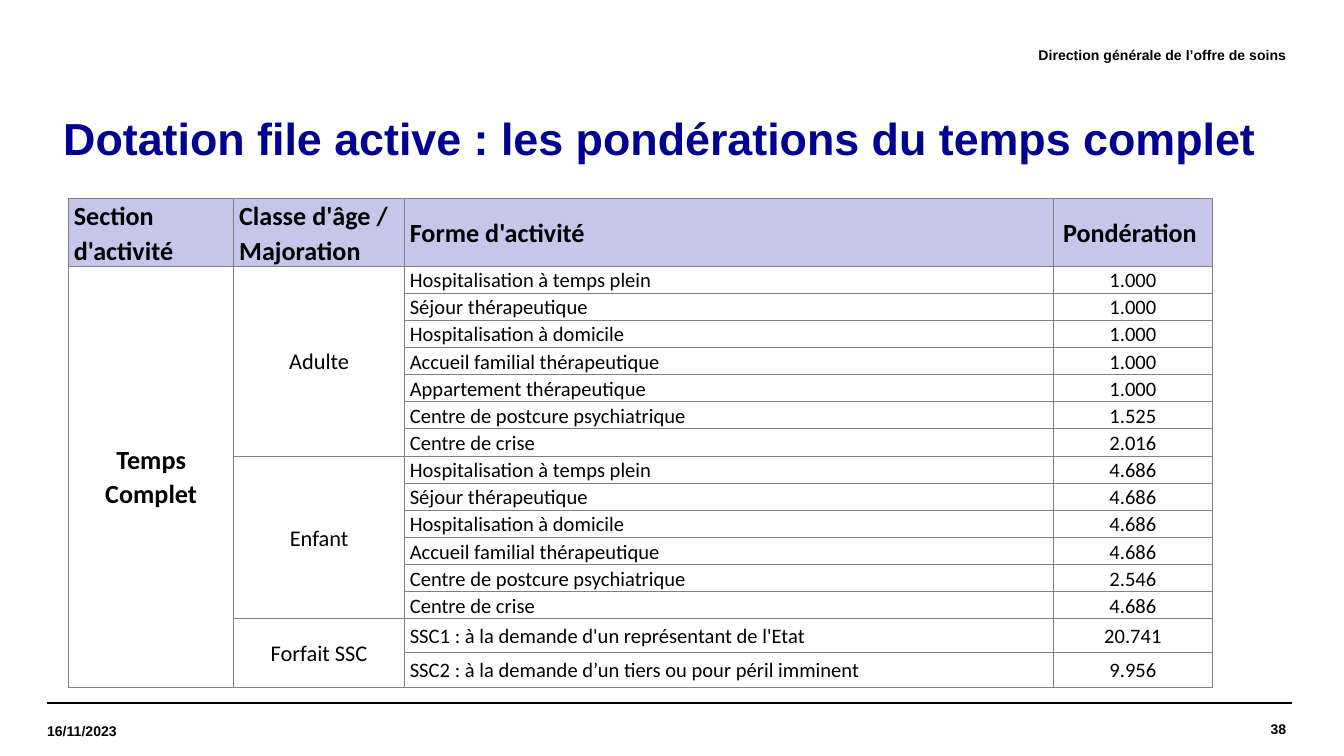
from lxml.etree import SubElement
from pptx import Presentation
from pptx.dml.color import RGBColor
from pptx.enum.shapes import MSO_CONNECTOR
from pptx.enum.text import MSO_ANCHOR, PP_ALIGN
from pptx.oxml.ns import qn
from pptx.util import Inches, Pt

# Content
TITLE = "Dotation file active : les pondérations du temps complet"
DEPARTMENT = "Direction générale de l’offre de soins"
DATE = "16/11/2023"
PAGE_NUMBER = "38"

HEADERS = ["Section d'activité", "Classe d'âge / Majoration", "Forme d'activité", "Pondération "]
SECTION = "Temps Complet"
GROUPS = [
    ("Adulte", [
        ("Hospitalisation à temps plein", "1.000"),
        ("Séjour thérapeutique", "1.000"),
        ("Hospitalisation à domicile", "1.000"),
        ("Accueil familial thérapeutique", "1.000"),
        ("Appartement thérapeutique", "1.000"),
        ("Centre de postcure psychiatrique", "1.525"),
        ("Centre de crise", "2.016"),
    ]),
    ("Enfant", [
        ("Hospitalisation à temps plein", "4.686"),
        ("Séjour thérapeutique", "4.686"),
        ("Hospitalisation à domicile", "4.686"),
        ("Accueil familial thérapeutique", "4.686"),
        ("Centre de postcure psychiatrique", "2.546"),
        ("Centre de crise", "4.686"),
    ]),
    ("Forfait SSC", [
        ("SSC1 : à la demande d'un représentant de l'Etat", "20.741"),
        ("SSC2 : à la demande d’un tiers ou pour péril imminent", "9.956"),
    ]),
]

COLORS = {
    "text": "000000",
    "title": "000091",
    "header": "C6C6EA",
    "body": "FFFFFF",
    "border": "808080",
}
PAGE_WIDTH = 10
COLUMN_WIDTHS = [1.23, 1.27, 4.83, 1.18]
ROW_HEIGHTS = [0.48] + [2.63 / 13] * 13 + [0.25, 0.26]
LEFT, CENTER, RIGHT = PP_ALIGN.LEFT, PP_ALIGN.CENTER, PP_ALIGN.RIGHT


def write(frame, text, size=7.5, font="Arial", color="text", bold=True, align=LEFT, spacing=None):
    frame.word_wrap = True
    para = frame.paragraphs[0]
    para.alignment = align
    if spacing:
        para.line_spacing = spacing
    span = para.add_run()
    span.text = text
    span.font.size = Pt(size)
    span.font.name = font
    span.font.bold = bold
    span.font.color.rgb = RGBColor.from_string(COLORS[color])


def add_text(page, text, left, top, width, height, inset=(0, 0), **style):
    box = page.shapes.add_textbox(Inches(left), Inches(top), Inches(width), Inches(height))
    frame = box.text_frame
    frame.margin_left, frame.margin_right = Inches(inset[0]), Inches(inset[1])
    frame.margin_top = frame.margin_bottom = 0
    frame.vertical_anchor = MSO_ANCHOR.MIDDLE
    write(frame, text, **style)


def format_cell(cell, fill):
    cell.margin_left = cell.margin_right = Inches(0.04)
    cell.margin_top = cell.margin_bottom = 0
    cell.vertical_anchor = MSO_ANCHOR.MIDDLE
    properties = cell._tc.get_or_add_tcPr()
    for side in ("a:lnL", "a:lnR", "a:lnT", "a:lnB"):
        border = SubElement(properties, qn(side), w=str(Pt(0.5)))
        paint = SubElement(border, qn("a:solidFill"))
        SubElement(paint, qn("a:srgbClr"), val=COLORS["border"])
    cell.fill.solid()
    cell.fill.fore_color.rgb = RGBColor.from_string(COLORS[fill])


def fill_cell(cell, text, **style):
    write(cell.text_frame, text, font="Calibri", spacing=1.07, **style)


# Widescreen page, 16:9
deck = Presentation()
deck.slide_width = Inches(PAGE_WIDTH)
deck.slide_height = Inches(PAGE_WIDTH * 9 / 16)
page = deck.slides.add_slide(deck.slide_layouts[6])

# Footer rules
for start, end in [(0.35, 9.57), (0.39, 9.61)]:
    rule = page.shapes.add_connector(
        MSO_CONNECTOR.STRAIGHT, Inches(start), Inches(5.23), Inches(end), Inches(5.23))
    rule.line.width = Pt(0.8)
    rule.line.color.rgb = RGBColor.from_string(COLORS["text"])
    SubElement(rule._element.spPr, qn("a:effectLst"))

# Page number, date, title and department
add_text(page, PAGE_NUMBER, 8.09, 5.23, 1.48, 0.39, align=RIGHT)
add_text(page, DATE, 0.35, 5.25, 1.32, 0.38)
add_text(page, TITLE, 0.35, 0.75, 9.21, 0.59, inset=(0.12, 0.1),
         size=24, color="title", spacing=0.9)
add_text(page, DEPARTMENT, 3.14, 0.21, 6.43, 0.39, align=RIGHT)

# Weighting table
table = page.shapes.add_table(
    len(ROW_HEIGHTS), len(COLUMN_WIDTHS), Inches(0.51), Inches(1.48),
    Inches(sum(COLUMN_WIDTHS)), Inches(sum(ROW_HEIGHTS))).table
table.horz_banding = False
for column, width in zip(table.columns, COLUMN_WIDTHS):
    column.width = Inches(width)
for index, height in enumerate(ROW_HEIGHTS):
    table.rows[index].height = Inches(height)
    for cell in table.rows[index].cells:
        format_cell(cell, "body" if index else "header")

for index, header in enumerate(HEADERS):
    fill_cell(table.cell(0, index), header, size=14,
              align=CENTER if header == HEADERS[-1] else LEFT)

# Section and age groups span the rows of their activities
table.cell(1, 0).merge(table.cell(len(ROW_HEIGHTS) - 1, 0))
fill_cell(table.cell(1, 0), SECTION, size=14, align=CENTER)
row = 1
for group, activities in GROUPS:
    table.cell(row, 1).merge(table.cell(row + len(activities) - 1, 1))
    fill_cell(table.cell(row, 1), group, size=12, bold=False, align=CENTER)
    for activity, weight in activities:
        fill_cell(table.cell(row, 2), activity, size=11, bold=False)
        fill_cell(table.cell(row, 3), weight, size=11, bold=False, align=CENTER)
        row += 1

deck.save("out.pptx")
